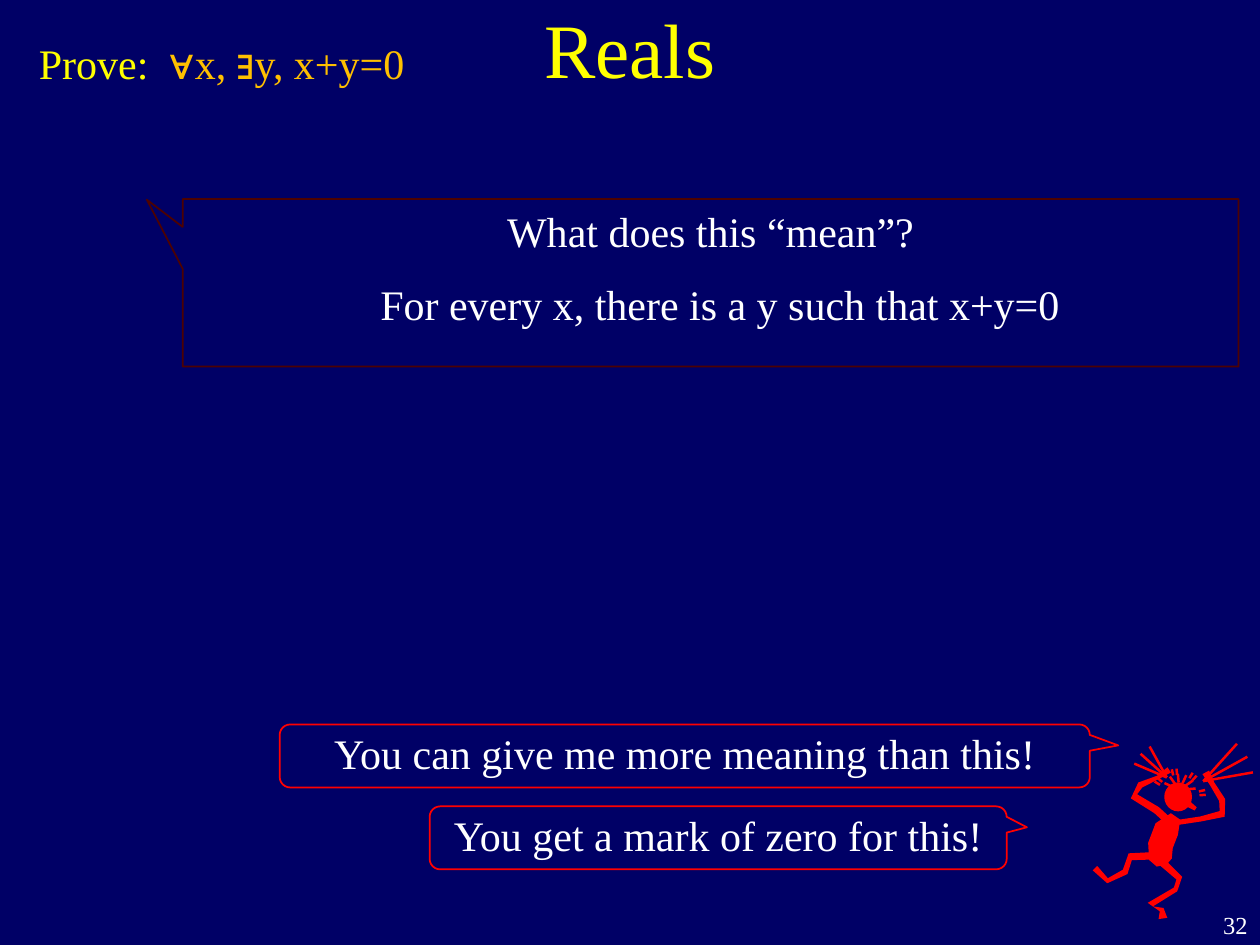
from itertools import chain
from math import atan2, cos, radians, sin
from typing import NamedTuple

from pptx import Presentation
from pptx.dml.color import RGBColor
from pptx.enum.shapes import MSO_SHAPE
from pptx.enum.text import MSO_ANCHOR, MSO_AUTO_SIZE, PP_ALIGN
from pptx.util import Emu, Pt

PX = 9144  # EMU per px, 100 px to the inch
NAVY = RGBColor(0x00, 0x00, 0x66)
WHITE = RGBColor(0xFF, 0xFF, 0xFF)
YELLOW = RGBColor(0xFF, 0xFF, 0x00)
GOLD = RGBColor(0xFF, 0xC0, 0x00)
RED = RGBColor(0xFF, 0x00, 0x00)
MAROON = RGBColor(0x4D, 0x02, 0x01)
SERIF, SANS = "Times New Roman", "Arial"
QUANTIFIERS = ("∀", "∃")


class Frame(NamedTuple):
    left: int
    top: int
    width: int
    height: int

    def emu(self) -> list[Emu]:
        return [Emu(length * PX) for length in self]


class Label(NamedTuple):
    frame: Frame
    spans: tuple[str, ...]
    color: RGBColor
    size: int = 24
    align: PP_ALIGN = PP_ALIGN.LEFT
    wrap: bool = False


class Callout(NamedTuple):
    frame: Frame
    text: str
    preset: MSO_SHAPE
    adjustments: tuple[float, ...]
    line: RGBColor
    inset: int


class Joint(NamedTuple):
    """A point on the middle line of a limb, and how thick the limb is there."""
    x: float
    y: float
    thickness: int


class Fan(NamedTuple):
    """Equal strokes around a centre, from the inner to the outer radius."""
    x: int
    y: int
    inner: int
    outer: int
    first_angle: int
    step: int
    count: int


LABELS = [
    Label(Frame(950, 717, 50, 33), ("32",), WHITE, 14, PP_ALIGN.RIGHT, True),
    Label(Frame(125, 25, 216, 50), ("∀", "x, ", "∃", "y, x+y=0"), GOLD),
    Label(Frame(292, 216, 608, 50),
          ("For every x, there is a y such that x+y=0",), WHITE, wrap=True),
    Label(Frame(21, 25, 108, 50), ("Prove:",), YELLOW),
]

ROUND = MSO_SHAPE.ROUNDED_RECTANGULAR_CALLOUT
ROUND_TAIL = (0.535, -0.167, 0.167)
CALLOUTS = [
    Callout(Frame(145, 158, 838, 133), "What does this “mean”?",
            MSO_SHAPE.RECTANGULAR_CALLOUT, (-0.534, -0.496), MAROON, 5),
    Callout(Frame(222, 575, 643, 50), "You can give me more meaning than this!",
            ROUND, ROUND_TAIL, RED, 0),
    Callout(Frame(341, 640, 458, 50), "You get a mark of zero for this!",
            ROUND, ROUND_TAIL, RED, 0),
]

HEAD = Frame(924, 621, 22, 23)
LIMBS = {
    "nose": [Joint(940, 636, 6), Joint(949, 642, 3)],
    "body": [Joint(933, 648, 9), Joint(926, 658, 20), Joint(921, 671, 20),
             Joint(921, 682, 18), Joint(922, 687, 8)],
    "right arm": [Joint(933, 653, 4), Joint(953, 650, 4), Joint(970, 646, 6),
                  Joint(970, 635, 5), Joint(962, 622, 4), Joint(957, 613, 6)],
    "left arm": [Joint(930, 654, 6), Joint(918, 643, 6), Joint(900, 632, 6),
                 Joint(905, 623, 5), Joint(919, 617, 3), Joint(928, 611, 5)],
    "right leg": [Joint(923, 685, 6), Joint(936, 697, 5), Joint(933, 706, 4),
                  Joint(913, 718, 5), Joint(922, 722, 4), Joint(923, 729, 7)],
    "left leg": [Joint(921, 679, 6), Joint(897, 680, 6), Joint(893, 692, 5),
                 Joint(879, 699, 4), Joint(869, 689, 5)],
}
FANS = {
    "right hair": Fan(955, 620, 0, 40, -10, -19, 3),
    "left hair": Fan(926, 617, 0, 28, 203, 19, 3),
    "fringe": Fan(936, 627, 6, 13, -5, -30, 6),
    "sparks": Fan(935, 632, 17, 22, -3, -45, 4),
    "more sparks": Fan(935, 632, 17, 22, -13, -45, 4),
}
STROKE = 2  # px, thickness of one hair or spark


def style(para, color: RGBColor, size: int, align: PP_ALIGN) -> None:
    para.alignment = align
    para.font.name = SERIF
    para.font.size = Pt(size)
    para.font.color.rgb = color


def add_label(page, label: Label) -> None:
    box = page.shapes.add_textbox(*label.frame.emu())
    box.text_frame.word_wrap = label.wrap
    box.text_frame.auto_size = MSO_AUTO_SIZE.SHAPE_TO_FIT_TEXT
    para = box.text_frame.paragraphs[0]
    style(para, label.color, label.size, label.align)
    for text in label.spans:
        span = para.add_run()
        span.text = text
        if text in QUANTIFIERS:
            span.font.name = SANS


def add_callout(page, callout: Callout) -> None:
    shape = page.shapes.add_shape(callout.preset, *callout.frame.emu())
    for index, value in enumerate(callout.adjustments):
        shape.adjustments[index] = value
    shape.shadow.inherit = False
    shape.fill.background()
    shape.line.color.rgb = callout.line
    shape.line.width = Pt(1)
    frame = shape.text_frame
    frame.word_wrap = True
    frame.vertical_anchor = MSO_ANCHOR.TOP
    frame.margin_top = frame.margin_bottom = Emu(callout.inset * PX)
    frame.text = callout.text
    style(frame.paragraphs[0], WHITE, 24, PP_ALIGN.CENTER)


def paint_red(part) -> None:
    part.shadow.inherit = False
    part.fill.solid()
    part.fill.fore_color.rgb = RED
    part.line.fill.background()


def fan_strokes(fan: Fan) -> list[list[Joint]]:
    angles = [radians(fan.first_angle + fan.step * index) for index in range(fan.count)]
    return [[Joint(fan.x + radius * cos(angle), fan.y + radius * sin(angle), STROKE)
             for radius in (fan.inner, fan.outer)] for angle in angles]


def add_limb(group, joints: list[Joint]) -> None:
    """Fill the band that lies half a thickness to each side of the joints."""
    left_side, right_side = [], []
    for index, joint in enumerate(joints):
        before, after = joints[max(index - 1, 0)], joints[min(index + 1, len(joints) - 1)]
        heading = atan2(after.y - before.y, after.x - before.x)
        across = -sin(heading) * joint.thickness / 2
        down = cos(heading) * joint.thickness / 2
        left_side.append(((joint.x + across) * PX, (joint.y + down) * PX))
        right_side.append(((joint.x - across) * PX, (joint.y - down) * PX))
    start, *rest = left_side + right_side[::-1]
    builder = group.shapes.build_freeform(*start)
    builder.add_line_segments(rest, close=True)
    paint_red(builder.convert_to_shape())


def add_dancer(page) -> None:
    group = page.shapes.add_group_shape()
    paint_red(group.shapes.add_shape(MSO_SHAPE.OVAL, *HEAD.emu()))
    strokes = chain.from_iterable(map(fan_strokes, FANS.values()))
    for joints in chain(LIMBS.values(), strokes):
        add_limb(group, joints)


def set_title(page, text: str) -> None:
    title = page.shapes.title
    title.left, title.top, title.width, title.height = Frame(75, -25, 850, 125).emu()
    title.text_frame.text = text
    title.text_frame.vertical_anchor = MSO_ANCHOR.MIDDLE
    style(title.text_frame.paragraphs[0], YELLOW, 44, PP_ALIGN.CENTER)


def main() -> None:
    deck = Presentation()
    deck.slide_width, deck.slide_height = Emu(1000 * PX), Emu(750 * PX)
    page = deck.slides.add_slide(deck.slide_layouts[5])
    page.background.fill.solid()
    page.background.fill.fore_color.rgb = NAVY
    set_title(page, "Reals")
    for label in LABELS:
        add_label(page, label)
    add_dancer(page)
    for callout in CALLOUTS:
        add_callout(page, callout)
    deck.save("out.pptx")


if __name__ == "__main__":
    main()
